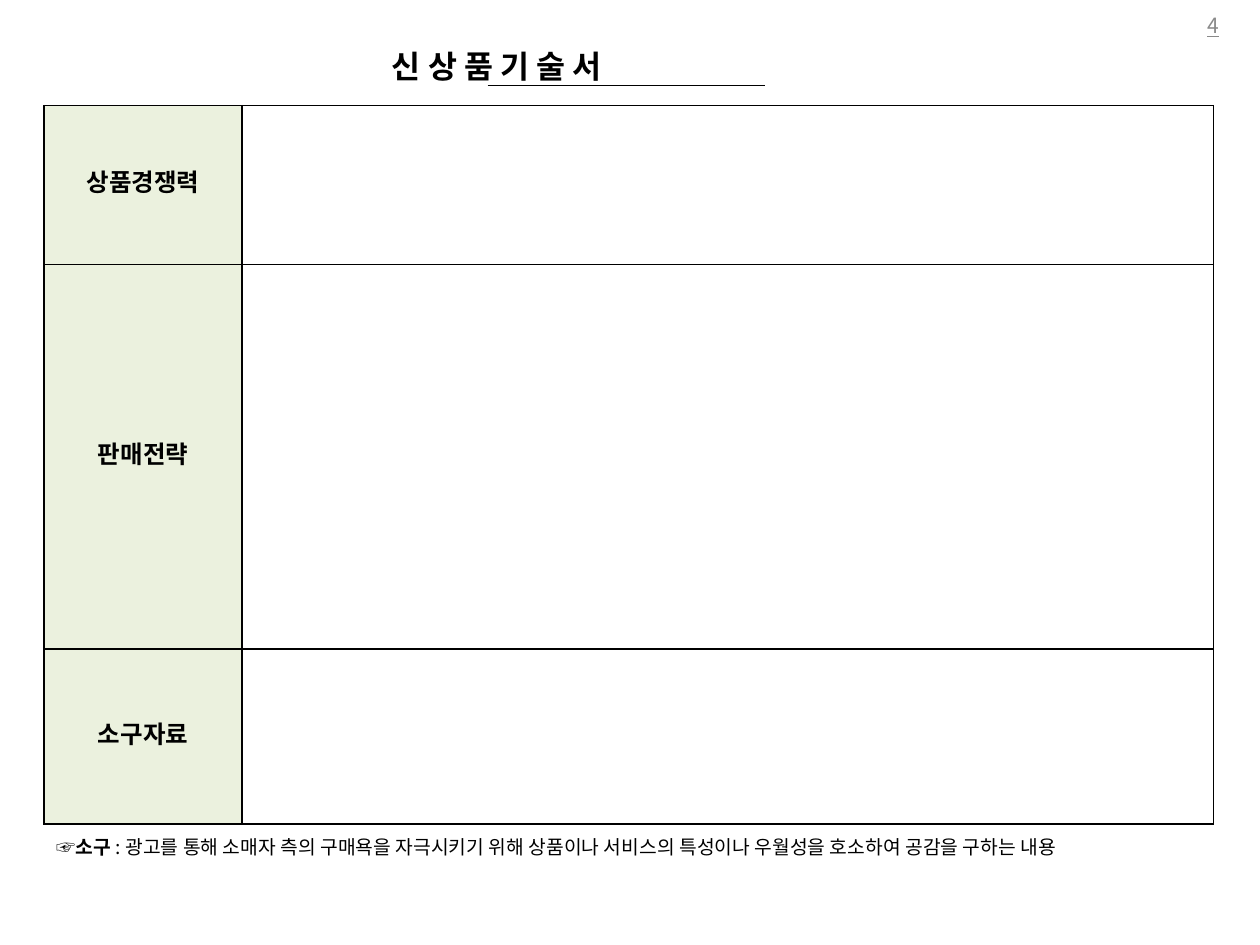
"""Build the new product description slide with its title, form table and footnote."""
from lxml.etree import SubElement
from pptx import Presentation
from pptx.dml.color import RGBColor
from pptx.enum.shapes import MSO_CONNECTOR
from pptx.enum.text import MSO_ANCHOR as Anchor, PP_ALIGN as Align
from pptx.oxml import parse_xml
from pptx.oxml.ns import nsdecls, qn
from pptx.util import Cm, Pt

FONT = "Noto Sans CJK KR"
BLACK = "000000"


def style_run(run, size, color=BLACK, bold=False):
    run.font.name = FONT
    run.font.size = Pt(size)
    run.font.bold = bold
    run.font.color.rgb = RGBColor.from_string(color)
    SubElement(run.font._element, qn("a:ea")).set("typeface", FONT)


def style_cell(cell, border, fill=None):
    cell.margin_left = cell.margin_right = cell.margin_top = cell.margin_bottom = 0
    if fill:
        cell.fill.solid()
        cell.fill.fore_color.rgb = RGBColor.from_string(fill)
    else:
        cell.fill.background()
    paint = f'<a:solidFill><a:srgbClr val="{border}"/></a:solidFill>' if border else "<a:noFill/>"
    for index, side in enumerate(("lnL", "lnR", "lnT", "lnB")):
        line = parse_xml(f'<a:{side} {nsdecls("a")} w="12700">{paint}</a:{side}>')
        cell._tc.get_or_add_tcPr().insert(index, line)
    if not cell.text_frame.text:
        SubElement(cell.text_frame.paragraphs[0]._p, qn("a:endParaRPr")).set("sz", "1000")


presentation = Presentation()
presentation.slide_width = Cm(25.4)
presentation.slide_height = Cm(19.05)
slide = presentation.slides.add_slide(presentation.slide_layouts[6])

sections = [("상품경쟁력", 3.2), ("판매전략", 7.75), ("소구자료", 3.53)]
form = slide.shapes.add_table(3, 2, Cm(0.89), Cm(2.13), Cm(23.57), Cm(14.48)).table
form.first_row = form.horz_banding = False
form.columns[0].width = Cm(3.99)
form.columns[1].width = Cm(19.58)
for row, (label, height) in enumerate(sections):
    form.rows[row].height = Cm(height)
    cell = form.cell(row, 0)
    cell.text_frame.text = label
    cell.vertical_anchor = Anchor.MIDDLE
    paragraph = cell.text_frame.paragraphs[0]
    paragraph.alignment = Align.CENTER
    paragraph.line_spacing = Pt(16)
    style_run(paragraph.runs[0], 14, bold=True)
    style_cell(cell, BLACK, "EBF1DE")
    style_cell(form.cell(row, 1), BLACK)

underline = slide.shapes.add_connector(
    MSO_CONNECTOR.STRAIGHT, Cm(9.83), Cm(1.73), Cm(15.42), Cm(1.73))
underline.line.color.rgb = RGBColor.from_string(BLACK)
underline.line.width = Pt(0.75)
SubElement(underline._element.spPr, qn("a:effectLst"))

heading = slide.shapes.add_table(2, 6, Cm(-0.05), Cm(0.84), Cm(25.58), Cm(1.48)).table
heading.first_row = heading.horz_banding = False
for column, width in zip(heading.columns, (4.67, 6.27, 1.5, 2.62, 2.62, 7.9)):
    column.width = Cm(width)
for row, height in zip(heading.rows, (0.84, 0.64)):
    row.height = Cm(height)
title = heading.cell(0, 0)
title.merge(heading.cell(0, 5))
title.text_frame.text = "신 상 품 기 술 서"
style_run(title.text_frame.paragraphs[0].runs[0], 18, bold=True)
for cell in heading.iter_cells():
    style_cell(cell, None)
title.margin_left = Cm(7.95)

number = slide.shapes.add_textbox(Cm(21.49), 0, Cm(5.92), Cm(1.02)).text_frame
number.word_wrap = True
number.vertical_anchor = Anchor.MIDDLE
number.text = "4"
number.paragraphs[0].alignment = Align.CENTER
style_run(number.paragraphs[0].runs[0], 12, "898989")
number.paragraphs[0].runs[0].font.underline = True

footnote = slide.shapes.add_textbox(Cm(0.89), Cm(16.71), Cm(23.8), Cm(0.74)).text_frame
footnote.word_wrap = True
parts = [
    ("☞소구 ", True),
    (": 광고를 통해 소매자 측의 구매욕을 자극시키기 위해 상품이나 서비스의 특성이나 우월성을 호소하여 공감을 구하는 내용", False),
]
for text, bold in parts:
    run = footnote.paragraphs[0].add_run()
    run.text = text
    style_run(run, 11, bold=bold)

presentation.save("out.pptx")
